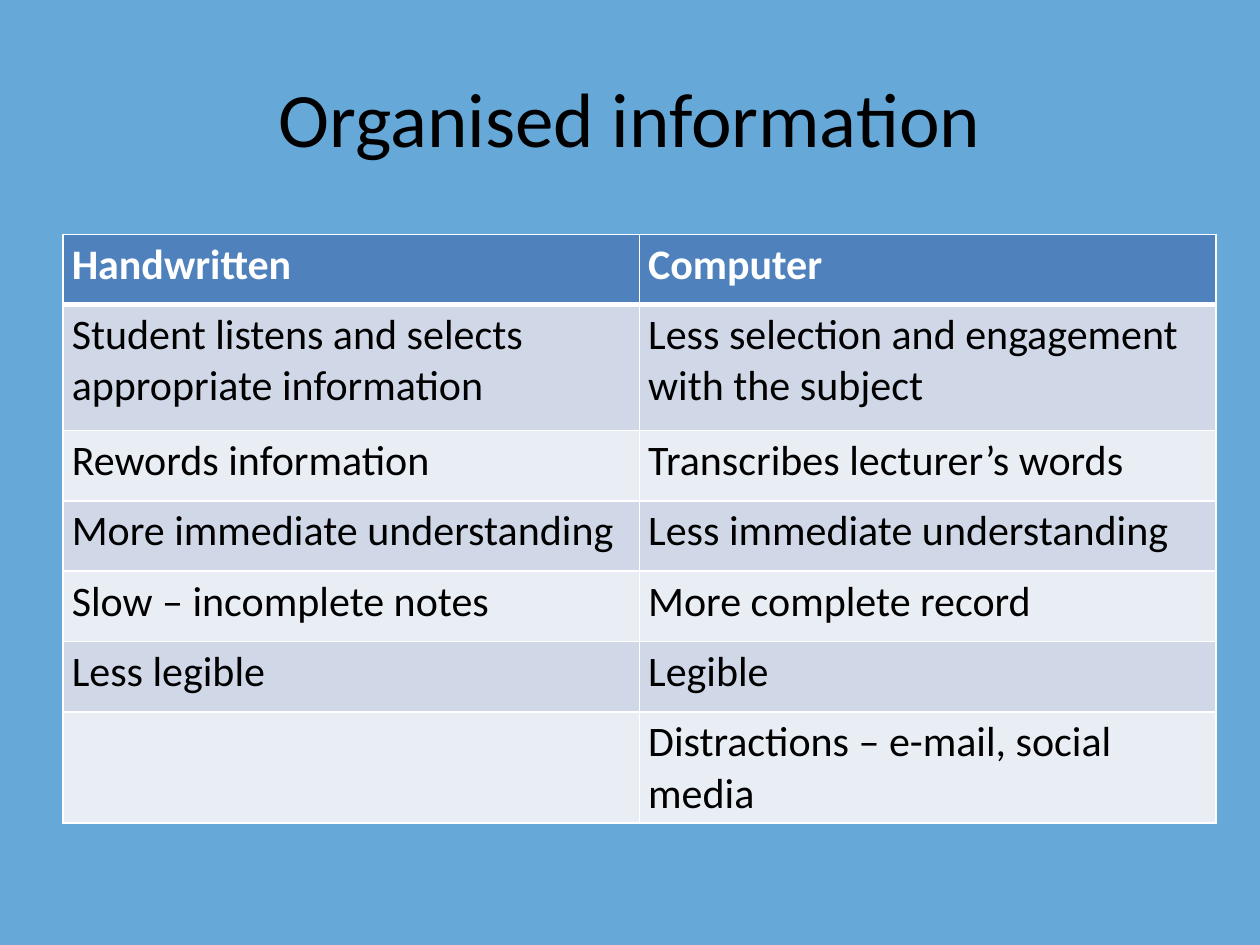
from dataclasses import dataclass

from lxml import etree
from pptx import Presentation
from pptx.dml.color import RGBColor
from pptx.enum.text import MSO_ANCHOR, PP_ALIGN
from pptx.oxml.ns import qn
from pptx.util import Inches, Pt

MIDDLE = MSO_ANCHOR.MIDDLE
LEFT, CENTER = PP_ALIGN.LEFT, PP_ALIGN.CENTER


@dataclass(frozen=True)
class Theme:
    font: str = "Calibri"
    title_size: int = 44
    table_size: int = 24
    background: str = "66A9D9"
    text: str = "000000"
    header_text: str = "FFFFFF"
    header_fill: str = "4F81BD"
    bands: tuple = ("D0D8E8", "E9EDF4")
    rule: str = "FFFFFF"
    thin: int = 1
    thick: int = 3


def write(frame, text, *, font, size, color, bold=False, align=LEFT):
    paragraph = frame.paragraphs[0]
    paragraph.alignment = align
    run = paragraph.add_run()
    run.text = text
    run.font.name = font
    run.font.size = Pt(size)
    run.font.bold = bold
    run.font.color.rgb = RGBColor.from_string(color)


def set_borders(cell, color, widths):
    """Draw the left, right, top and bottom borders, with widths in points."""
    properties = cell._tc.get_or_add_tcPr()
    for side, width in zip("LRTB", widths):
        line = etree.SubElement(properties, qn(f"a:ln{side}"), w=str(Pt(width)))
        fill = etree.SubElement(line, qn("a:solidFill"))
        etree.SubElement(fill, qn("a:srgbClr"), val=color)


class SlideBuilder:
    """Places elements on one slide; positions are shares of its size."""

    def __init__(self, deck, theme):
        self.theme = theme
        self.width, self.height = deck.slide_width, deck.slide_height
        self.slide = deck.slides.add_slide(deck.slide_layouts[6])
        background = self.slide.background.fill
        background.solid()
        background.fore_color.rgb = RGBColor.from_string(theme.background)

    def box(self, left, top, width, height):
        return (round(left * self.width), round(top * self.height),
                round(width * self.width), round(height * self.height))

    def title(self, text, *area):
        frame = self.slide.shapes.add_textbox(*self.box(*area)).text_frame
        frame.word_wrap = True
        frame.vertical_anchor = MIDDLE
        write(frame, text, font=self.theme.font, size=self.theme.title_size,
              color=self.theme.text, align=CENTER)

    def table(self, rows, row_heights, *area):
        """Add a banded table; row_heights are relative weights."""
        left, top, width, height = self.box(*area)
        columns = len(rows[0])
        table = self.slide.shapes.add_table(
            len(rows), columns, left, top, width, height).table
        table.horz_banding = False
        for column in table.columns:
            column.width = width // columns
        for index, (texts, weight) in enumerate(zip(rows, row_heights)):
            table.rows[index].height = round(height * weight / sum(row_heights))
            for column, text in enumerate(texts):
                self.cell(table.cell(index, column), text, index)

    def cell(self, cell, text, row):
        theme = self.theme
        header = row == 0
        above = theme.thick if row == 1 else theme.thin
        below = theme.thick if header else theme.thin
        set_borders(cell, theme.rule, (theme.thin, theme.thin, above, below))
        cell.fill.solid()
        cell.fill.fore_color.rgb = RGBColor.from_string(
            theme.header_fill if header else theme.bands[(row - 1) % 2])
        cell.margin_left = cell.margin_right = Inches(0.07)
        cell.margin_top = cell.margin_bottom = Inches(0.04)
        if text:
            write(cell.text_frame, text, font=theme.font, size=theme.table_size,
                  color=theme.header_text if header else theme.text, bold=header)


COMPARISON = [
    ("Handwritten", "Computer"),
    ("Student listens and selects appropriate information",
     "Less selection and engagement with the subject"),
    ("Rewords information", "Transcribes lecturer’s words"),
    ("More immediate understanding", "Less immediate understanding"),
    ("Slow – incomplete notes", "More complete record"),
    ("Less legible", "Legible"),
    ("", "Distractions – e-mail, social media"),
]
ROW_HEIGHTS = [0.56, 1] + [0.56] * 5


def main():
    deck = Presentation()
    deck.slide_width, deck.slide_height = Inches(10), Inches(7.5)
    builder = SlideBuilder(deck, Theme())
    builder.title("Organised information", 0.05, 0.04, 0.9, 1 / 6)
    builder.table(COMPARISON, ROW_HEIGHTS, 0.05, 0.248, 0.915, 0.58)
    deck.save("out.pptx")


if __name__ == "__main__":
    main()
